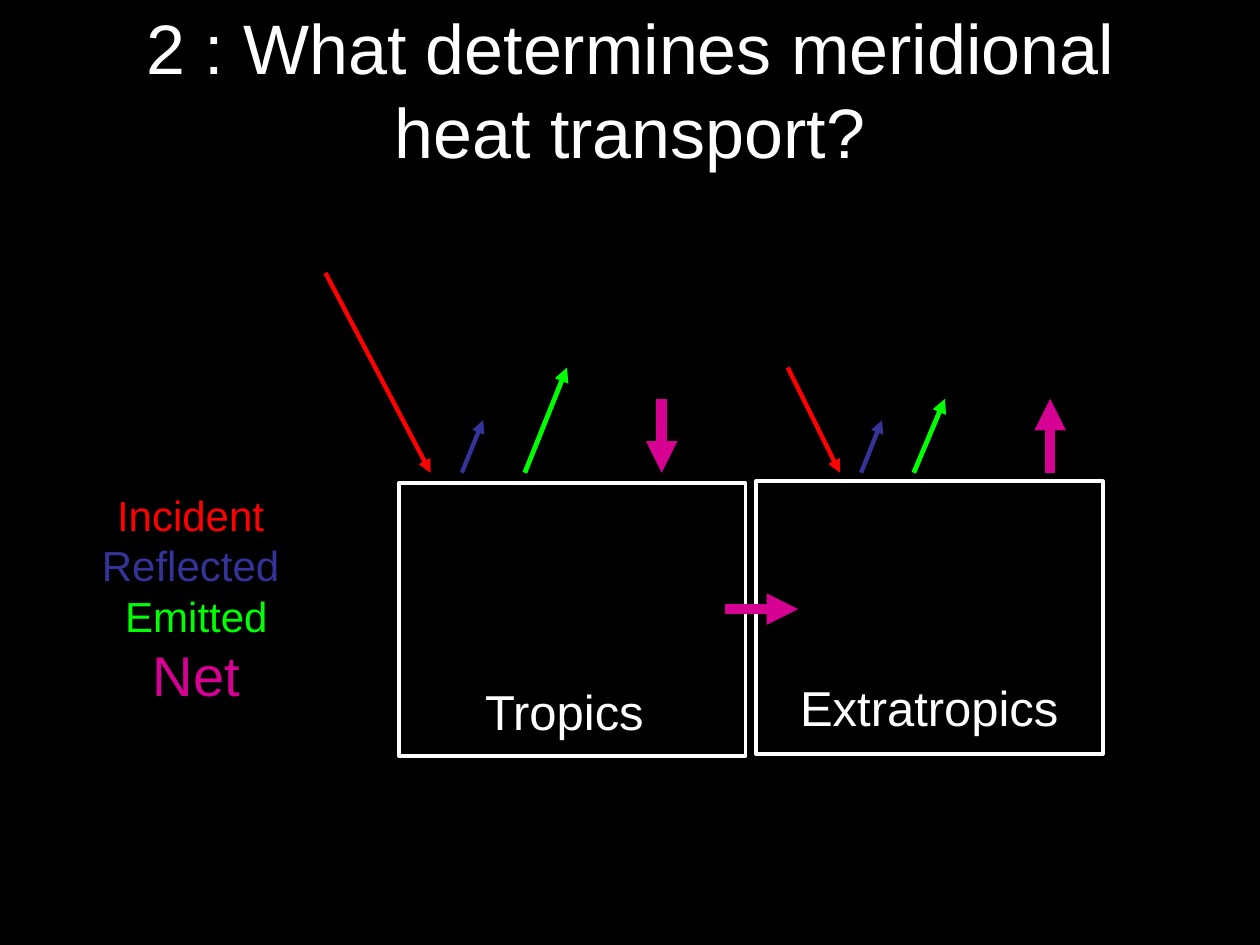
from pptx import Presentation
from pptx.dml.color import RGBColor
from pptx.enum.shapes import MSO_CONNECTOR, MSO_SHAPE
from pptx.enum.text import MSO_ANCHOR, PP_ALIGN
from pptx.oxml.ns import qn
from pptx.util import Cm, Pt
from lxml import etree

STRAIGHT = MSO_CONNECTOR.STRAIGHT
RECTANGLE = MSO_SHAPE.RECTANGLE
MIDDLE, TOP = MSO_ANCHOR.MIDDLE, MSO_ANCHOR.TOP
CENTER, LEFT = PP_ALIGN.CENTER, PP_ALIGN.LEFT

COLORS = {
    "background": "000000",
    "text": "FFFFFF",
    "incident": "FF0000",
    "reflected": "333399",
    "emitted": "00FF00",
    "net": "D60093",
}
ARROW_WIDTHS = {"incident": 2.5, "reflected": 2.5, "emitted": 2.75, "net": 6}

presentation = Presentation()
presentation.slide_width, presentation.slide_height = Cm(25.4), Cm(19.05)
slide = presentation.slides.add_slide(presentation.slide_layouts[6])
slide.background.fill.solid()
slide.background.fill.fore_color.rgb = RGBColor.from_string(COLORS["background"])


def add_text(box, lines, align=LEFT, anchor=TOP, wrap=True):
    """Add a text box at box (cm); each line is (text, size, color name)."""
    frame = slide.shapes.add_textbox(*map(Cm, box)).text_frame
    frame.word_wrap = wrap
    frame.vertical_anchor = anchor
    for index, (text, size, color) in enumerate(lines):
        paragraph = frame.add_paragraph() if index else frame.paragraphs[0]
        paragraph.text = text
        paragraph.alignment = align
        paragraph.font.name = "Arial"
        paragraph.font.size = Pt(size)
        paragraph.font.color.rgb = RGBColor.from_string(COLORS[color])


def add_arrow(kind, start_x, start_y, end_x, end_y):
    arrow = slide.shapes.add_connector(
        STRAIGHT, Cm(start_x), Cm(start_y), Cm(end_x), Cm(end_y))
    arrow.line.color.rgb = RGBColor.from_string(COLORS[kind])
    arrow.line.width = Pt(ARROW_WIDTHS[kind])
    etree.SubElement(arrow.line._get_or_add_ln(), qn("a:tailEnd"), type="triangle")
    etree.SubElement(arrow._element.spPr, qn("a:effectLst"))


add_text((1.27, 0.2, 22.86, 3.18),
         [("2 : What determines meridional heat transport?", 40, "text")],
         align=CENTER, anchor=MIDDLE)

# Regions: name, box left and top, label left and top
regions = [
    ("Tropics", 8.04, 9.74, 9.53, 13.61),
    ("Extratropics", 15.24, 9.7, 15.88, 13.54),
]
for name, left, top, label_left, label_top in regions:
    region = slide.shapes.add_shape(RECTANGLE, Cm(left), Cm(top), Cm(6.99), Cm(5.5))
    region.shadow.inherit = False
    region.fill.solid()
    region.fill.fore_color.rgb = RGBColor.from_string(COLORS["background"])
    region.line.color.rgb = RGBColor.from_string(COLORS["text"])
    region.line.width = Pt(2.25)
    add_text((label_left, label_top, 5.92, 1.45), [(name, 28, "text")])

add_text((1.8, 9.74, 4.32, 4.66),
         [("Incident ", 24, "incident"), ("Reflected ", 24, "reflected"),
          ("Emitted", 24, "emitted"), ("Net", 32, "net")],
         align=CENTER, wrap=False)

# Vertical fluxes between the atmosphere and the region tops
SURFACE = 9.53
downward = [
    ("incident", 6.56, 5.5, 8.68),
    ("incident", 15.88, 7.41, 16.93),
    ("net", 13.34, 8.04, 13.34),
]
upward = [
    ("reflected", 9.31, 9.74, 8.47),
    ("reflected", 17.36, 17.78, 8.47),
    ("emitted", 10.58, 11.43, 7.41),
    ("emitted", 18.42, 19.05, 8.04),
    ("net", 21.17, 21.17, 8.04),
]
for kind, start_x, start_y, end_x in downward:
    add_arrow(kind, start_x, start_y, end_x, SURFACE)
for kind, start_x, end_x, end_y in upward:
    add_arrow(kind, start_x, SURFACE, end_x, end_y)

# Heat transport from the tropics to the extratropics
add_arrow("net", 14.61, 12.28, 16.09, 12.28)

presentation.save("out.pptx")
